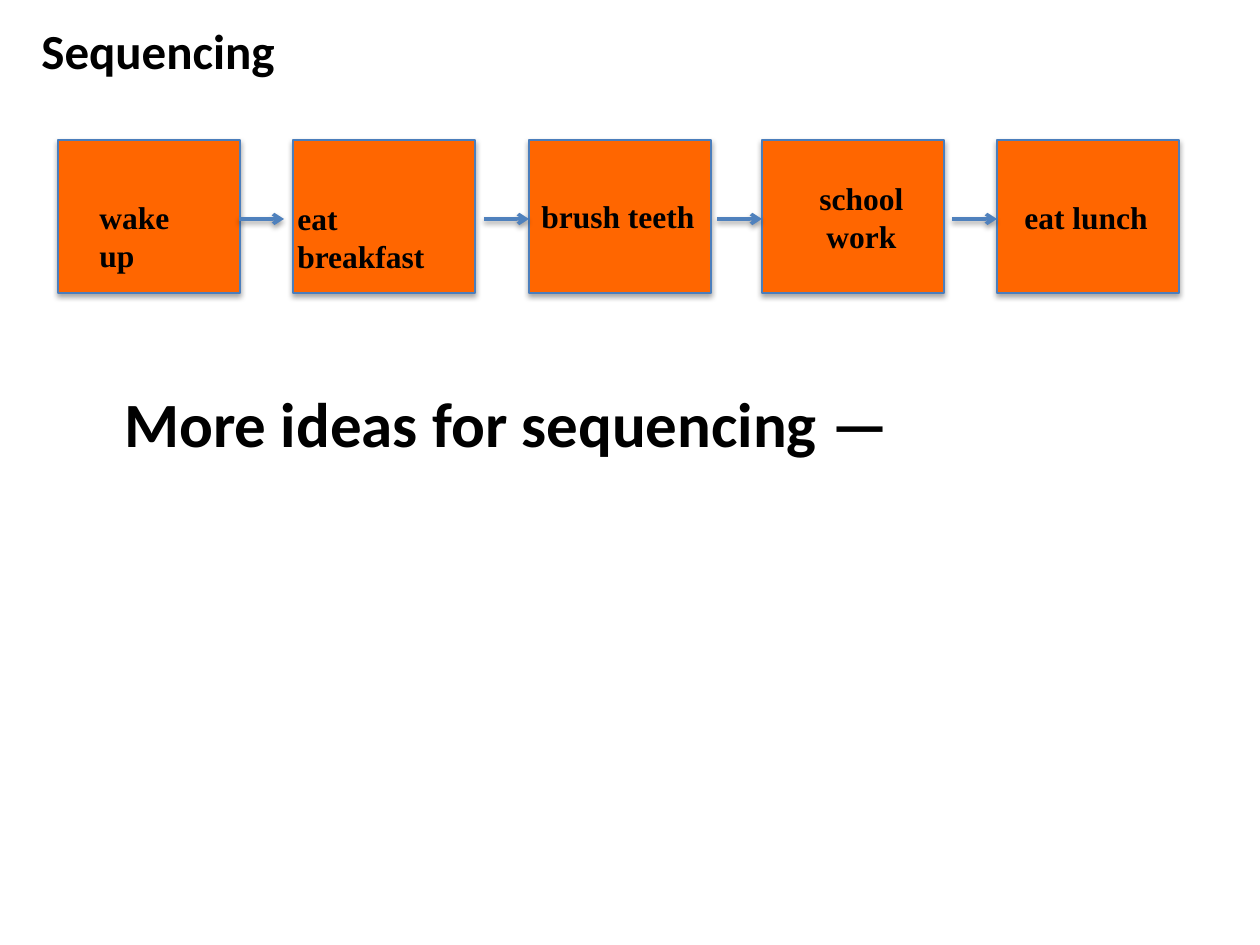
import pptx
import pptx.dml.color
import pptx.enum.shapes
import pptx.enum.text
import pptx.oxml
import pptx.oxml.ns
import pptx.util

PX = 914400 / 126
BLACK = pptx.dml.color.RGBColor(0x00, 0x00, 0x00)
ORANGE = pptx.dml.color.RGBColor(0xFF, 0x66, 0x00)
BORDER_BLUE = pptx.dml.color.RGBColor(0x4B, 0x7E, 0xBC)
ARROW_BLUE = pptx.dml.color.RGBColor(0x4F, 0x81, 0xBD)
LEFT = pptx.enum.text.PP_ALIGN.LEFT
CENTER = pptx.enum.text.PP_ALIGN.CENTER


def emu(*lengths):
    return [pptx.util.Emu(round(length * PX)) for length in lengths]


class SequenceSlide:
    heading_font = "Calibri"
    label_font = "Times New Roman"
    label_size = 18

    def __init__(self, deck):
        self.slide = deck.slides.add_slide(deck.slide_layouts[6])

    def shadow(self, part, distance, opacity):
        part._element.spPr.append(pptx.oxml.parse_xml(
            f'<a:effectLst {pptx.oxml.ns.nsdecls("a")}>'
            f'<a:outerShdw blurRad="40000" dist="{distance}" dir="5400000" rotWithShape="0">'
            f'<a:srgbClr val="000000"><a:alpha val="{opacity}000"/></a:srgbClr>'
            '</a:outerShdw></a:effectLst>'))

    def text(self, lines, left, top, width, height, font, size, align=LEFT):
        frame = self.slide.shapes.add_textbox(*emu(left, top, width, height)).text_frame
        frame.word_wrap = True
        frame.text = lines
        for paragraph in frame.paragraphs:
            paragraph.alignment = align
            for run in paragraph.runs:
                run.font.name = font
                run.font.size = pptx.util.Pt(size)
                run.font.bold = True
                run.font.color.rgb = BLACK

    def heading(self, words, left, top, width, height, size):
        self.text(words, left, top, width, height, self.heading_font, size)

    def label(self, words, left, top, width, height, align):
        self.text(words, left, top, width, height, self.label_font, self.label_size, align)

    def step(self, left, top, width, height):
        box = self.slide.shapes.add_shape(
            pptx.enum.shapes.MSO_SHAPE.RECTANGLE, *emu(left, top, width, height))
        box.fill.solid()
        box.fill.fore_color.rgb = ORANGE
        box.line.color.rgb = BORDER_BLUE
        box.line.width = pptx.util.Pt(0.75)
        self.shadow(box, 23000, 35)

    def arrow(self, left, y, length):
        arrow = self.slide.shapes.add_connector(
            pptx.enum.shapes.MSO_CONNECTOR.STRAIGHT, *emu(left, y, left + length, y))
        arrow.line.color.rgb = ARROW_BLUE
        arrow.line.width = pptx.util.Pt(2)
        arrow.line._get_or_add_ln().append(pptx.oxml.parse_xml(
            f'<a:tailEnd {pptx.oxml.ns.nsdecls("a")} type="arrow"/>'))
        self.shadow(arrow, 20000, 38)


def main():
    deck = pptx.Presentation()
    deck.slide_width, deck.slide_height = emu(1260, 945)
    sequence = SequenceSlide(deck)

    sequence.heading("Sequencing", 29, 14, 310, 72, 28)
    for step_left in (58, 293, 529, 762, 997):
        sequence.step(step_left, 140, 182, 153)
    labels = [
        ("wake up", 87, 192, 137, 50, LEFT),
        ("eat breakfast", 285, 193, 199, 50, LEFT),
        ("brush teeth", 529, 191, 179, 50, LEFT),
        ("school\nwork", 805, 173, 113, 89, CENTER),
        ("eat lunch", 1012, 192, 150, 50, LEFT),
    ]
    for label in labels:
        sequence.label(*label)
    for arrow_left in (239, 484, 717, 952):
        sequence.arrow(arrow_left, 219, 45)
    sequence.heading("More ideas for sequencing —", 112, 378, 950, 89, 36)

    deck.save("out.pptx")


if __name__ == "__main__":
    main()
